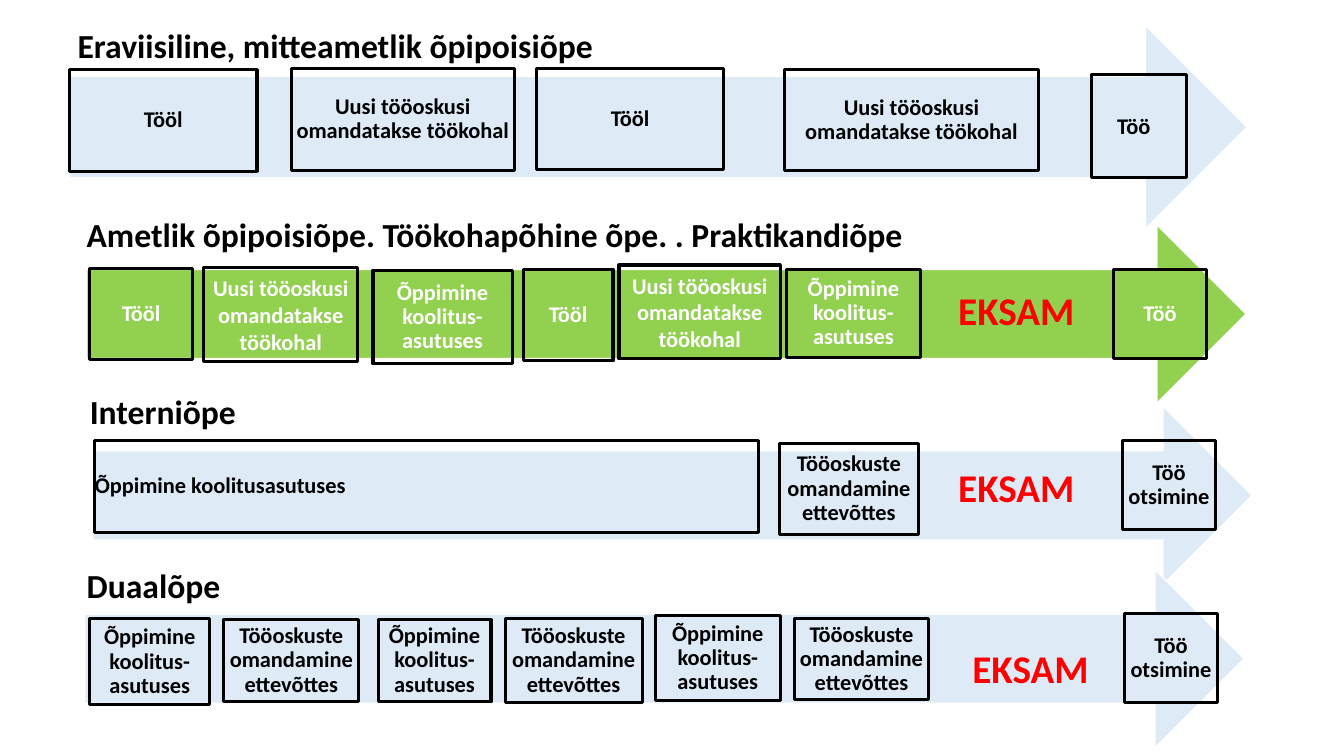
from typing import NamedTuple

from pptx import Presentation
from pptx.dml.color import RGBColor
from pptx.enum.shapes import MSO_SHAPE
from pptx.enum.text import MSO_ANCHOR, PP_ALIGN
from pptx.shapes.autoshape import Shape
from pptx.slide import Slide
from pptx.util import Emu, Pt

SCALE = 9144
BLACK, WHITE, RED = "000000", "FFFFFF", "FF0000"
PALE, GREEN = "DEEBF7", "92D050"


class Area(NamedTuple):
    left: int
    top: int
    width: int
    height: int


class Step(NamedTuple):
    text: str
    area: Area
    align: PP_ALIGN = PP_ALIGN.CENTER
    spacing: float = 0.9


class Label(NamedTuple):
    text: str
    area: Area
    size: int = 24
    color: str = BLACK
    align: PP_ALIGN = PP_ALIGN.LEFT


class Path(NamedTuple):
    arrow: Area
    fill: str
    ink: str
    steps: list[Step]
    labels: list[Label]


def px(value: int) -> Emu:
    return Emu(value * SCALE)


def rgb(code: str) -> RGBColor:
    return RGBColor.from_string(code)


def place(area: Area) -> list[Emu]:
    return [px(value) for value in area]


def exam(left: int, top: int) -> Label:
    return Label("EKSAM", Area(left, top, 150, 103), 28, RED, PP_ALIGN.CENTER)


def write(shape: Shape, text: str, size: int, color: str,
          align: PP_ALIGN, spacing: float = 0.9) -> None:
    frame = shape.text_frame
    frame.word_wrap = True
    frame.vertical_anchor = MSO_ANCHOR.MIDDLE
    frame.margin_left = frame.margin_right = 0
    frame.margin_top = frame.margin_bottom = px(18)
    line = frame.paragraphs[0]
    line.text = text
    line.alignment = align
    line.line_spacing = spacing
    font = line.font
    font.name = "Calibri"
    font.size = Pt(size)
    font.bold = True
    font.color.rgb = rgb(color)


def draw_arrow(slide: Slide, path: Path) -> None:
    shape = slide.shapes.add_shape(MSO_SHAPE.RIGHT_ARROW, *place(path.arrow))
    shape.shadow.inherit = False
    shape.fill.solid()
    shape.fill.fore_color.rgb = rgb(path.fill)
    shape.line.color.rgb = rgb(WHITE)
    shape.line.width = Pt(1)


def draw_step(slide: Slide, step: Step, ink: str) -> None:
    shape = slide.shapes.add_shape(MSO_SHAPE.RECTANGLE, *place(step.area))
    shape.shadow.inherit = False
    shape.fill.background()
    shape.line.color.rgb = rgb(BLACK)
    shape.line.width = Pt(2.25)
    if step.text:
        write(shape, step.text, 16, ink, step.align, step.spacing)


def draw_label(slide: Slide, label: Label) -> None:
    shape = slide.shapes.add_textbox(*place(label.area))
    write(shape, label.text, label.size, label.color, label.align)


WORK = "Tööl"
SKILL = "Uusi tööoskusi omandatakse töökohal"
STUDY = "Õppimine koolitus-asutuses"
TRAIN = "Tööoskuste omandamine ettevõttes"
JOB = "Töö"
SEEK = "Töö otsimine"

PATHS = [
    Path(Area(69, 25, 1168, 202), PALE, BLACK, [
        Step(WORK, Area(69, 69, 186, 101)),
        Step(SKILL, Area(289, 68, 221, 101)),
        Step(WORK, Area(532, 68, 186, 100)),
        Step(SKILL, Area(778, 69, 252, 100)),
        Step("", Area(1083, 74, 94, 102)),
    ], [
        Label("Eraviisiline, mitteametlik õpipoisiõpe", Area(77, 26, 584, 43)),
        Label(JOB, Area(1041, 77, 167, 98), 16, BLACK, PP_ALIGN.CENTER),
    ]),
    Path(Area(86, 223, 1150, 177), GREEN, WHITE, [
        Step(WORK, Area(89, 266, 102, 91)),
        Step(SKILL, Area(202, 265, 153, 94), spacing=1.0),
        Step(STUDY, Area(370, 268, 138, 93)),
        Step(WORK, Area(519, 267, 89, 91)),
        Step(SKILL, Area(614, 263, 160, 93), spacing=1.0),
        Step(STUDY, Area(780, 267, 133, 88)),
        Step(JOB, Area(1104, 267, 93, 89)),
    ], [
        Label("Ametlik õpipoisiõpe. Töökohapõhine õpe. . Praktikandiõpe",
              Area(86, 213, 1150, 44)),
        exam(933, 259),
    ]),
    Path(Area(92, 403, 1150, 177), PALE, BLACK, [
        Step("Õppimine koolitusasutuses", Area(94, 437, 658, 91), PP_ALIGN.LEFT),
        Step(TRAIN, Area(773, 440, 138, 90)),
        Step(SEEK, Area(1113, 437, 93, 88)),
    ], [
        Label("Interniõpe", Area(89, 379, 239, 62)),
        exam(933, 434),
    ]),
    Path(Area(84, 565, 1150, 177), PALE, BLACK, [
        Step(STUDY, Area(89, 614, 119, 85)),
        Step(TRAIN, Area(222, 615, 134, 81)),
        Step(STUDY, Area(375, 615, 112, 81)),
        Step(TRAIN, Area(501, 614, 136, 83)),
        Step(STUDY, Area(650, 611, 124, 84)),
        Step(TRAIN, Area(788, 614, 133, 80)),
        Step(SEEK, Area(1115, 609, 93, 88)),
    ], [
        Label("Duaalõpe", Area(86, 552, 239, 62)),
        exam(947, 614),
    ]),
]


def main() -> None:
    deck = Presentation()
    deck.slide_width = px(1333)
    deck.slide_height = px(750)
    slide = deck.slides.add_slide(deck.slide_layouts[6])
    for path in PATHS:
        draw_arrow(slide, path)
    for path in PATHS:
        for step in path.steps:
            draw_step(slide, step, path.ink)
        for label in path.labels:
            draw_label(slide, label)
    deck.save("out.pptx")


if __name__ == "__main__":
    main()
